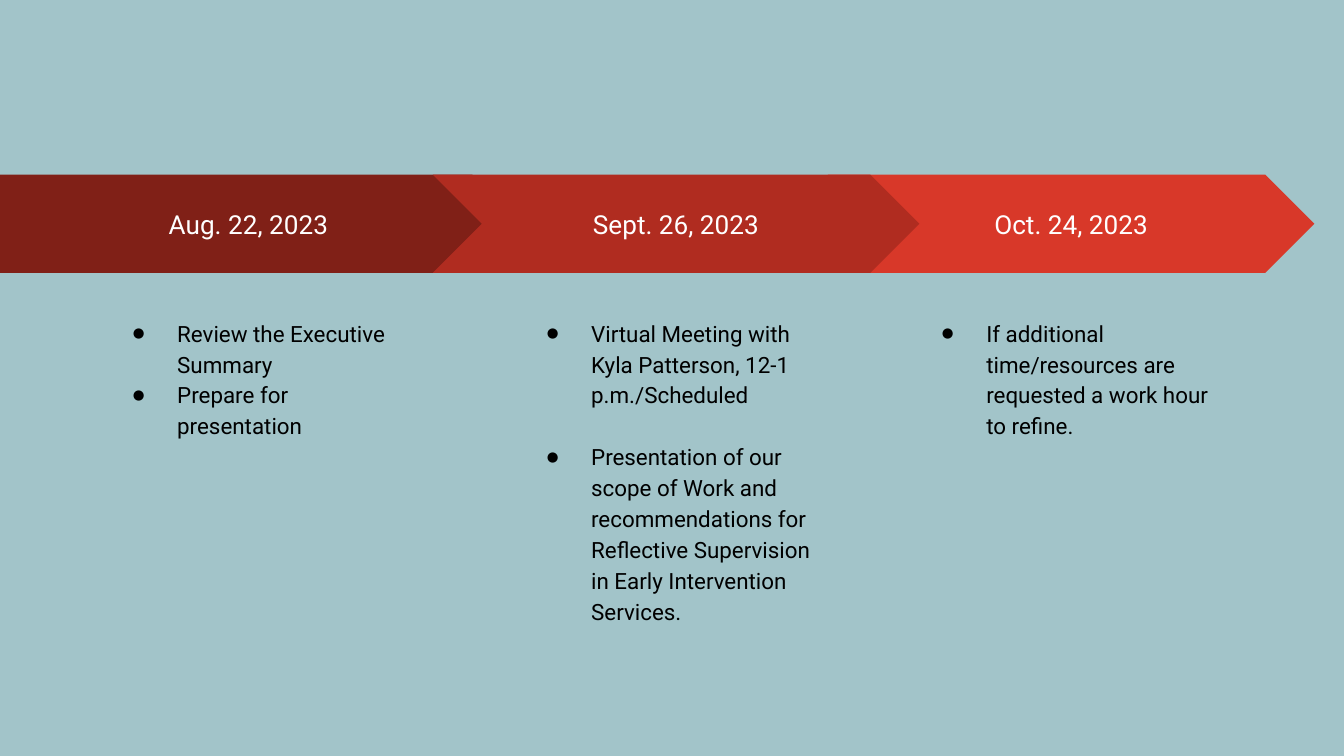
from lxml.etree import SubElement
from pptx import Presentation
from pptx.dml.color import RGBColor
from pptx.enum.shapes import MSO_SHAPE as Shape
from pptx.enum.text import MSO_ANCHOR as Anchor, PP_ALIGN as Align
from pptx.oxml.ns import qn
from pptx.util import Inches, Pt

WIDE = 10
HIGH = WIDE * 9 / 16
FONT, BACK, WHITE, BLACK = "Roboto", "A2C4C9", "FFFFFF", "000000"

# date, arrow shape, fill, arrow left, arrow width, notes left, notes
STEPS = [
    ("Aug. 22, 2023", Shape.PENTAGON, "802017", 0, 3.88, 0.72,
     ["Review the Executive Summary", "Prepare for presentation"]),
    ("Sept. 26, 2023", Shape.CHEVRON, "B02C20", 3.22, 3.62, 3.8,
     ["Virtual Meeting with Kyla Patterson, 12-1 p.m./Scheduled",
      "Presentation of our scope of Work and recommendations for "
      "Reflective Supervision in Early Intervention Services."]),
    ("Oct. 24, 2023", Shape.CHEVRON, "D83829", 6.16, 3.62, 6.74,
     ["If additional time/resources are requested a work hour to refine."]),
]
ORDER = [2, 0, 1]  # back to front, so each arrow overlaps correctly
GAPS = [0, 16.5, 0]  # points between the notes of each step
ARROW_TOP, ARROW_HIGH = 1.3, 0.73
NOTE_TOP, NOTE_WIDE, NOTE_HIGH = 2.25, 2.45, 2.86


def color(text):
    return RGBColor.from_string(text)


def write(para, text, size, hue):
    run = para.add_run()
    run.text = text
    run.font.name, run.font.size = FONT, Pt(size)
    run.font.color.rgb = color(hue)


def inset(frame):
    frame.word_wrap = True
    frame.margin_left = frame.margin_right = Inches(0.1)
    frame.margin_top = frame.margin_bottom = Inches(0.1)


def bullet(para):
    props = para._p.get_or_add_pPr()
    props.set("marL", str(Inches(0.5)))
    props.set("indent", str(Inches(-0.33)))
    tint = SubElement(props, qn("a:buClr"))
    SubElement(tint, qn("a:srgbClr"), val=BLACK)
    SubElement(props, qn("a:buSzPct"), val="60000")
    SubElement(props, qn("a:buFont"), typeface=FONT)
    SubElement(props, qn("a:buChar"), char="●")


def add_arrow(slide, date, kind, fill, left, width):
    arrow = slide.shapes.add_shape(
        kind, Inches(left), Inches(ARROW_TOP), Inches(width), Inches(ARROW_HIGH))
    arrow.shadow.inherit = False
    arrow.adjustments[0] = 0.5
    arrow.fill.solid()
    arrow.fill.fore_color.rgb = color(fill)
    arrow.line.fill.background()
    frame = arrow.text_frame
    inset(frame)
    frame.vertical_anchor = Anchor.MIDDLE
    para = frame.paragraphs[0]
    para.alignment = Align.CENTER
    write(para, date, 14, WHITE)


def add_notes(slide, left, notes, gap):
    box = slide.shapes.add_textbox(
        Inches(left), Inches(NOTE_TOP), Inches(NOTE_WIDE), Inches(NOTE_HIGH))
    frame = box.text_frame
    inset(frame)
    for i, note in enumerate(notes):
        para = frame.add_paragraph() if i else frame.paragraphs[0]
        para.line_spacing = 1.15
        para.space_before = Pt(gap if i else 0)
        bullet(para)
        write(para, note, 12, BLACK)


def main():
    deck = Presentation()
    deck.slide_width, deck.slide_height = Inches(WIDE), Inches(HIGH)
    slide = deck.slides.add_slide(deck.slide_layouts[6])
    slide.background.fill.solid()
    slide.background.fill.fore_color.rgb = color(BACK)
    for i in ORDER:
        date, kind, fill, left, width, note_left, notes = STEPS[i]
        add_arrow(slide, date, kind, fill, left, width)
        add_notes(slide, note_left, notes, GAPS[i])
    deck.save("out.pptx")


if __name__ == "__main__":
    main()
